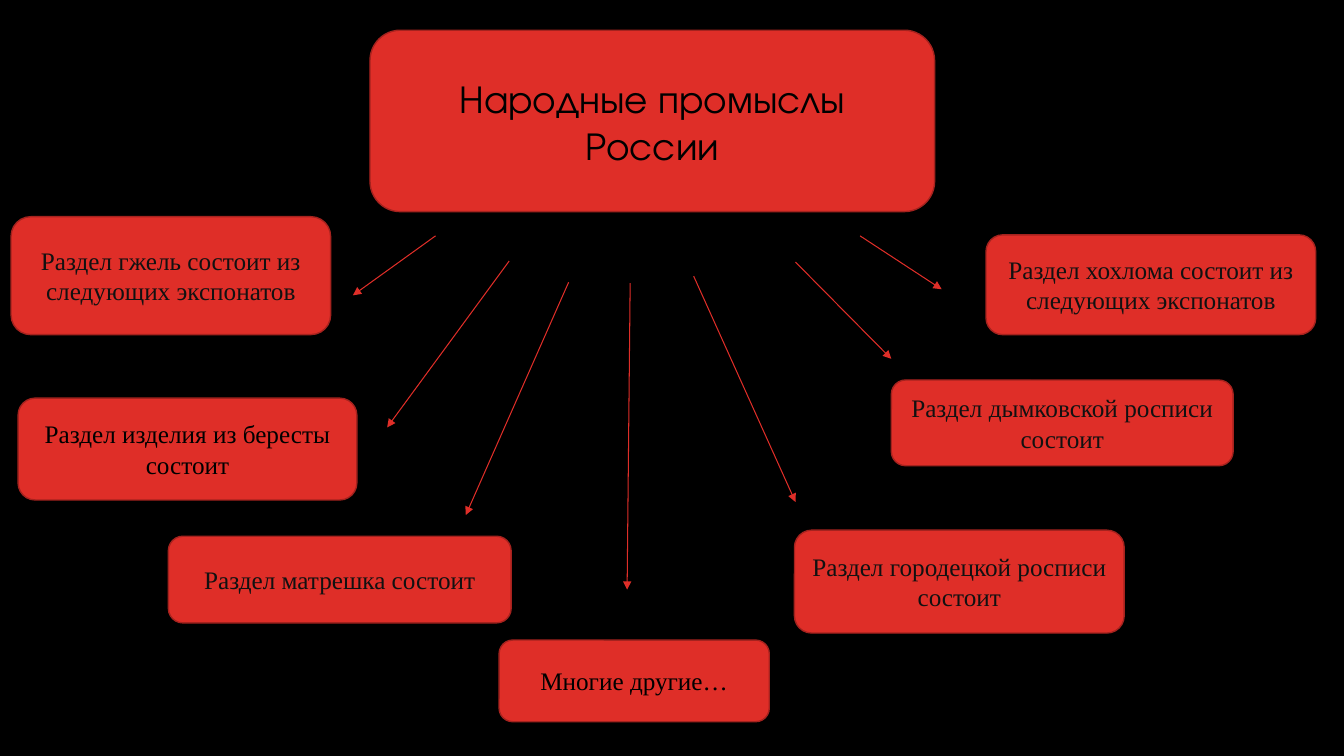
from lxml import etree
from pptx import Presentation
from pptx.dml.color import RGBColor
from pptx.enum.shapes import MSO_CONNECTOR, MSO_SHAPE
from pptx.enum.text import MSO_ANCHOR, PP_ALIGN
from pptx.oxml.ns import qn
from pptx.util import Pt

ROUNDED = MSO_SHAPE.ROUNDED_RECTANGLE
STRAIGHT = MSO_CONNECTOR.STRAIGHT
MIDDLE = MSO_ANCHOR.MIDDLE
CENTER = PP_ALIGN.CENTER

PX = 9144
COLORS = {
    "background": "000000",
    "red": "DF2E28",
    "border": "A5221E",
    "black": "000000",
    "soft": "111111",
}
TITLE_FONT = "TeX Gyre Adventor"
BODY_FONT = "Times New Roman"

SECTIONS = [
    ("Раздел гжель состоит из следующих экспонатов", (11, 215, 317, 117), "soft"),
    ("Раздел изделия из бересты состоит", (18, 395, 336, 101), "black"),
    ("Раздел матрешка состоит", (167, 532, 340, 86), "soft"),
    ("Многие другие…", (495, 635, 268, 81), "black"),
    ("Раздел городецкой росписи состоит", (788, 526, 327, 102), "soft"),
    ("Раздел дымковской росписи состоит", (884, 377, 339, 85), "soft"),
    ("Раздел хохлома состоит из следующих экспонатов", (978, 233, 327, 99), "soft"),
]
ARROWS = [
    ((432, 234), (350, 293)),
    ((505, 259), (384, 424)),
    ((564, 280), (462, 511)),
    ((625, 281), (622, 585)),
    ((688, 274), (789, 498)),
    ((789, 260), (884, 356)),
    ((853, 234), (934, 287)),
]


def color(name):
    return RGBColor.from_string(COLORS[name])


def px(*lengths):
    return [length * PX for length in lengths]


def add_box(page, text, frame, text_color, font_name=BODY_FONT, size=18):
    box = page.shapes.add_shape(ROUNDED, *px(*frame))
    box.shadow.inherit = False
    box.fill.solid()
    box.fill.fore_color.rgb = color("red")
    box.line.color.rgb = color("border")
    box.line.width = Pt(1)
    box.text_frame.word_wrap = True
    box.text_frame.vertical_anchor = MIDDLE
    para = box.text_frame.paragraphs[0]
    para.text = text
    para.alignment = CENTER
    para.font.name = font_name
    para.font.size = Pt(size)
    para.font.color.rgb = color(text_color)


def add_arrow(page, start, end):
    arrow = page.shapes.add_connector(STRAIGHT, *px(*start, *end))
    arrow.line.color.rgb = color("red")
    arrow.line.width = Pt(0.75)
    outline = arrow.line._get_or_add_ln()
    etree.SubElement(outline, qn("a:tailEnd"), type="triangle")
    etree.SubElement(arrow._element.spPr, qn("a:effectLst"))


def main():
    deck = Presentation()
    deck.slide_width, deck.slide_height = px(1333, 750)
    page = deck.slides.add_slide(deck.slide_layouts[6])
    page.background.fill.solid()
    page.background.fill.fore_color.rgb = color("background")

    add_box(page, "Народные промыслы России", (367, 30, 560, 180), "black", TITLE_FONT, 28)
    for text, frame, text_color in SECTIONS:
        add_box(page, text, frame, text_color)
    for start, end in ARROWS:
        add_arrow(page, start, end)

    deck.save("out.pptx")


if __name__ == "__main__":
    main()
